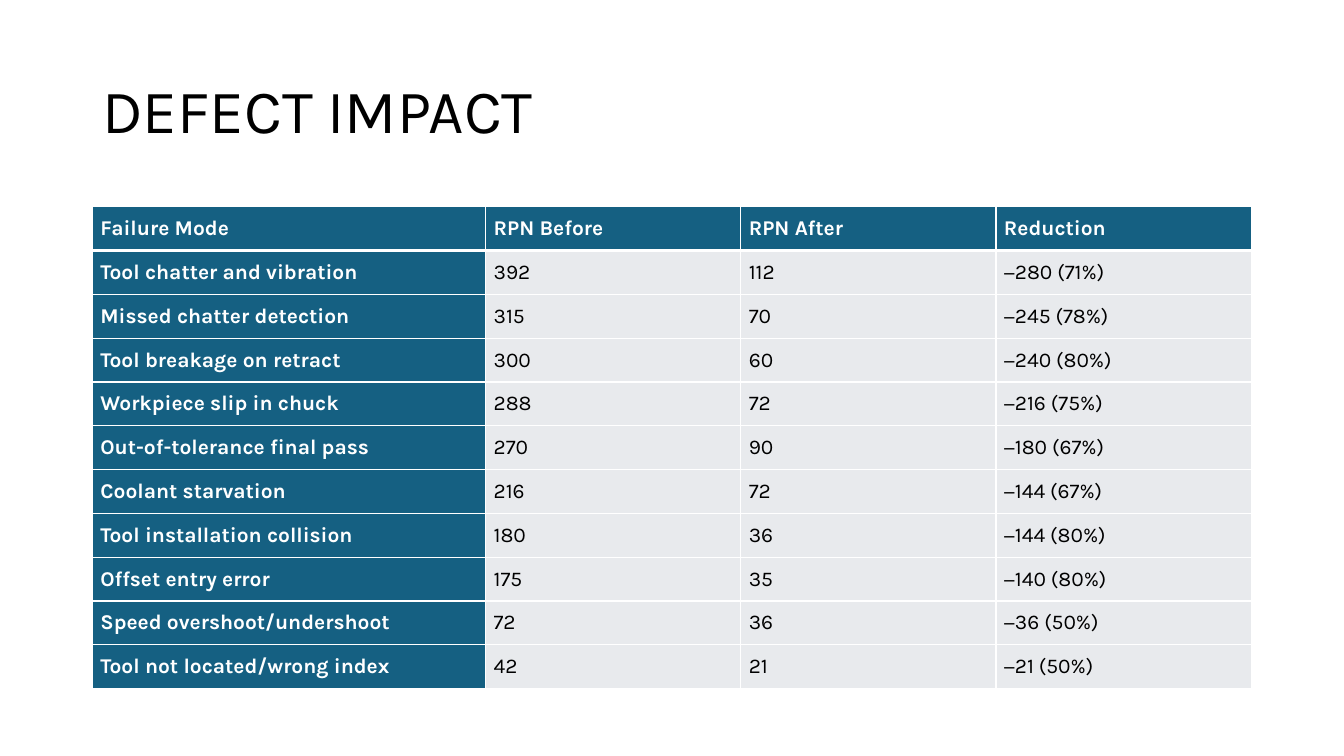
"""Build the defect impact slide: a title above a table of failure modes."""
from lxml import etree
from pptx import Presentation
from pptx import util as u
from pptx.dml.color import RGBColor
from pptx.enum import text
from pptx.oxml import ns

TEAL = RGBColor(0x15, 0x60, 0x82)
GREY = RGBColor(0xE8, 0xEA, 0xED)
WHITE = RGBColor(0xFF, 0xFF, 0xFF)
BLACK = RGBColor(0x00, 0x00, 0x00)
FACE = "Karla"
LEFT, WIDTH = u.Cm(2.33), u.Cm(29.21)

ROWS = [
    ("Failure Mode", "RPN Before", "RPN After", "Reduction"),
    ("Tool chatter and vibration", "392", "112", "−280 (71%)"),
    ("Missed chatter detection", "315", "70", "−245 (78%)"),
    ("Tool breakage on retract", "300", "60", "−240 (80%)"),
    ("Workpiece slip in chuck", "288", "72", "−216 (75%)"),
    ("Out-of-tolerance final pass", "270", "90", "−180 (67%)"),
    ("Coolant starvation", "216", "72", "−144 (67%)"),
    ("Tool installation collision", "180", "36", "−144 (80%)"),
    ("Offset entry error", "175", "35", "−140 (80%)"),
    ("Speed overshoot/undershoot", "72", "36", "−36 (50%)"),
    ("Tool not located/wrong index", "42", "21", "−21 (50%)"),
]
COLS = [9.91, 6.43, 6.43, 6.43]
HIGH = 1.104


def style(item, form):
    for key, val in form.items():
        setattr(item, key, val)


def border(cell, sides):
    props = cell._tc.get_or_add_tcPr()
    for side, size in sides.items():
        line = etree.SubElement(props, ns.qn("a:" + side), w=str(u.Pt(size)))
        fill = etree.SubElement(line, ns.qn("a:solidFill"))
        etree.SubElement(fill, ns.qn("a:srgbClr"), val=str(WHITE))


deck = Presentation()
style(deck, {"slide_width": u.Cm(33.87), "slide_height": u.Cm(19.05)})
slide = deck.slides.add_slide(deck.slide_layouts[6])

title = slide.shapes.add_textbox(LEFT, u.Cm(1.02), WIDTH, u.Cm(3.68)).text_frame
style(title, {"word_wrap": True, "vertical_anchor": text.MSO_ANCHOR.MIDDLE})
head = title.paragraphs[0]
style(head, {"text": "DEFECT IMPACT", "line_spacing": 0.9})
style(head.font, {"name": FACE, "size": u.Pt(44)})
head.font.color.rgb = BLACK

table = slide.shapes.add_table(
    len(ROWS), len(COLS), LEFT, u.Cm(5.21), WIDTH, u.Cm(HIGH * len(ROWS))
).table
style(table, {"first_col": True, "horz_banding": False})
for col, wide in zip(table.columns, COLS):
    col.width = u.Cm(wide)

pads = {
    "margin_left": u.Cm(0.2), "margin_right": u.Cm(0.2),
    "margin_top": u.Cm(0.1), "margin_bottom": u.Cm(0.1),
    "vertical_anchor": text.MSO_ANCHOR.MIDDLE,
}
for r, row in enumerate(ROWS):
    table.rows[r].height = u.Cm(HIGH)
    for c, word in enumerate(row):
        cell = table.cell(r, c)
        label = r == 0 or c == 0
        style(cell, {"text": word, **pads})
        border(cell, {"lnL": 1, "lnR": 1, "lnT": 3 if r == 1 else 1, "lnB": 3 if r == 0 else 1})
        cell.fill.solid()
        cell.fill.fore_color.rgb = TEAL if label else GREY
        font = cell.text_frame.paragraphs[0].runs[0].font
        style(font, {"name": FACE, "size": u.Pt(15), "bold": label})
        font.color.rgb = WHITE if label else BLACK

deck.save("out.pptx")
